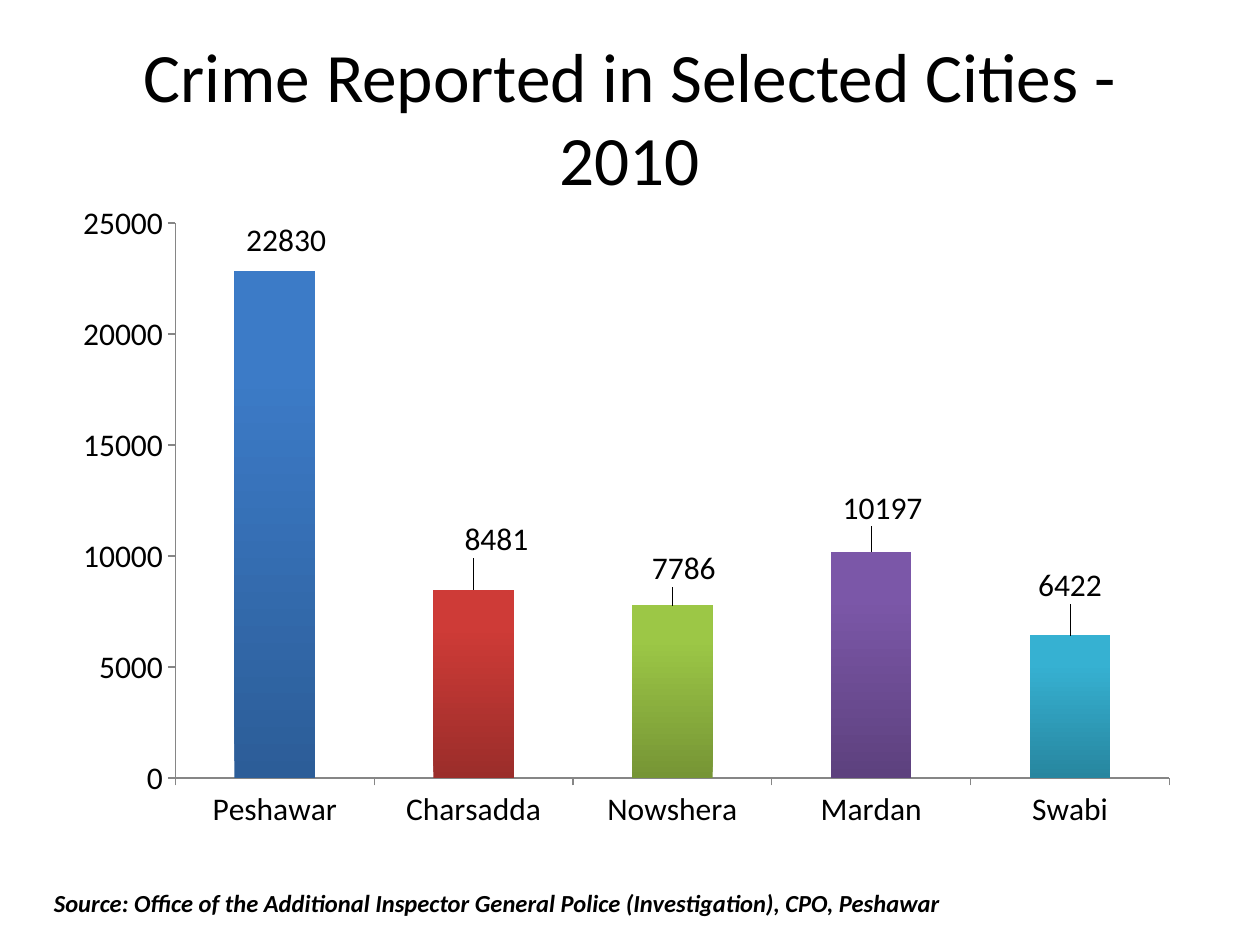
from dataclasses import dataclass

import lxml.etree
import pptx
import pptx.chart.data
import pptx.dml.color
import pptx.enum.chart
import pptx.enum.text
import pptx.oxml
import pptx.oxml.ns
import pptx.util

Pt = pptx.util.Pt
FONT = "Calibri"
BLACK = "000000"
AXIS_GREY = "868686"


@dataclass(frozen=True)
class City:
    name: str
    crimes: int
    dark: str
    light: str
    label_dx: float
    label_dy: float


@dataclass(frozen=True)
class Caption:
    text: str
    box: tuple[float, float, float, float]
    size: float
    centred: bool = False
    emphasis: bool = False


CITIES = [
    City("Peshawar", 22830, "2C5D98", "3C7BC7", 0.01, -0.01),
    City("Charsadda", 8481, "9B2D2A", "CE3B37", 0.02, -0.04),
    City("Nowshera", 7786, "769535", "9CC746", 0.01, -0.02),
    City("Mardan", 10197, "5D417E", "7B57A8", 0.01, -0.03),
    City("Swabi", 6422, "27869F", "36B1D2", 0.0, -0.04),
]
TITLE = Caption("Crime Reported in Selected Cities - 2010", (36, 21.6, 648, 90), 39.6, centred=True)
SOURCE = Caption(
    "Source: Office of the Additional Inspector General Police (Investigation), CPO, Peshawar",
    (23.76, 504, 525.6, 24.48), 14, emphasis=True,
)


def colour(value: str) -> pptx.dml.color.RGBColor:
    return pptx.dml.color.RGBColor.from_string(value)


def style_font(font, size: float) -> None:
    font.name = FONT
    font.size = Pt(size)
    font.color.rgb = colour(BLACK)


def add_caption(slide, caption: Caption) -> None:
    frame = slide.shapes.add_textbox(*map(Pt, caption.box)).text_frame
    frame.word_wrap = caption.centred
    paragraph = frame.paragraphs[0]
    if caption.centred:
        frame.vertical_anchor = pptx.enum.text.MSO_ANCHOR.MIDDLE
        paragraph.alignment = pptx.enum.text.PP_ALIGN.CENTER
    run = paragraph.add_run()
    run.text = caption.text
    style_font(run.font, caption.size)
    run.font.bold = run.font.italic = caption.emphasis


def manual_layout(**values: float | str) -> lxml.etree.ElementBase:
    settings = "".join(f'<c:{key} val="{value}"/>' for key, value in values.items())
    return pptx.oxml.parse_xml(
        f'<c:layout {pptx.oxml.ns.nsdecls("c")}><c:manualLayout>{settings}</c:manualLayout></c:layout>'
    )


def style_axis(axis) -> None:
    axis.has_major_gridlines = False
    axis.major_tick_mark = pptx.enum.chart.XL_TICK_MARK.OUTSIDE
    axis.minor_tick_mark = pptx.enum.chart.XL_TICK_MARK.NONE
    axis.format.line.color.rgb = colour(AXIS_GREY)
    axis.format.line.width = Pt(0.75)
    style_font(axis.tick_labels.font, 18)


def style_bar(point, city: City) -> None:
    fill = point.format.fill
    fill.gradient()
    fill.gradient_angle = 90
    bottom, top = fill.gradient_stops
    bottom.color.rgb = colour(city.dark)
    top.color.rgb = colour(city.light)
    top.position = 0.8
    style_font(point.data_label.font, 18)
    point.data_label.position = pptx.enum.chart.XL_LABEL_POSITION.OUTSIDE_END


def add_crime_chart(slide, cities: list[City]) -> None:
    crime_data = pptx.chart.data.CategoryChartData()
    crime_data.categories = [city.name for city in cities]
    crime_data.add_series("Series 1", [city.crimes for city in cities])
    chart = slide.shapes.add_chart(
        pptx.enum.chart.XL_CHART_TYPE.COLUMN_CLUSTERED,
        Pt(30.24), Pt(108), Pt(653.76), Pt(374.4), crime_data,
    ).chart
    chart.has_title = False
    chart.has_legend = False
    style_font(chart.font, 10)
    style_axis(chart.category_axis)
    style_axis(chart.value_axis)
    chart.value_axis.minimum_scale = 0
    chart.value_axis.maximum_scale = 25000
    chart.value_axis.major_unit = 5000

    plot = chart.plots[0]
    plot.gap_width = 147
    plot.vary_by_categories = False
    plot.has_data_labels = True
    plot.data_labels.show_value = True
    style_font(plot.data_labels.font, 18)
    crimes = plot.series[0]
    for index, city in enumerate(cities):
        style_bar(crimes.points[index], city)
    label_indexes = crimes._element.xpath("c:dLbls/c:dLbl/c:idx")
    for label_index, city in zip(label_indexes, cities):
        label_index.addnext(manual_layout(x=city.label_dx, y=city.label_dy))

    plot_area = chart._chartSpace.xpath("c:chart/c:plotArea")[0]
    for layout in plot_area.xpath("c:layout"):
        plot_area.remove(layout)
    plot_area.insert(0, manual_layout(
        layoutTarget="inner", xMode="edge", yMode="edge", x=0.107, y=0.052, w=0.869, h=0.847,
    ))


def main() -> None:
    """Build the slide on crime reported in selected cities."""
    deck = pptx.Presentation()
    deck.slide_width, deck.slide_height = Pt(720), Pt(540)
    slide = deck.slides.add_slide(deck.slide_layouts[6])
    add_caption(slide, TITLE)
    add_crime_chart(slide, CITIES)
    add_caption(slide, SOURCE)
    deck.save("out.pptx")


if __name__ == "__main__":
    main()
